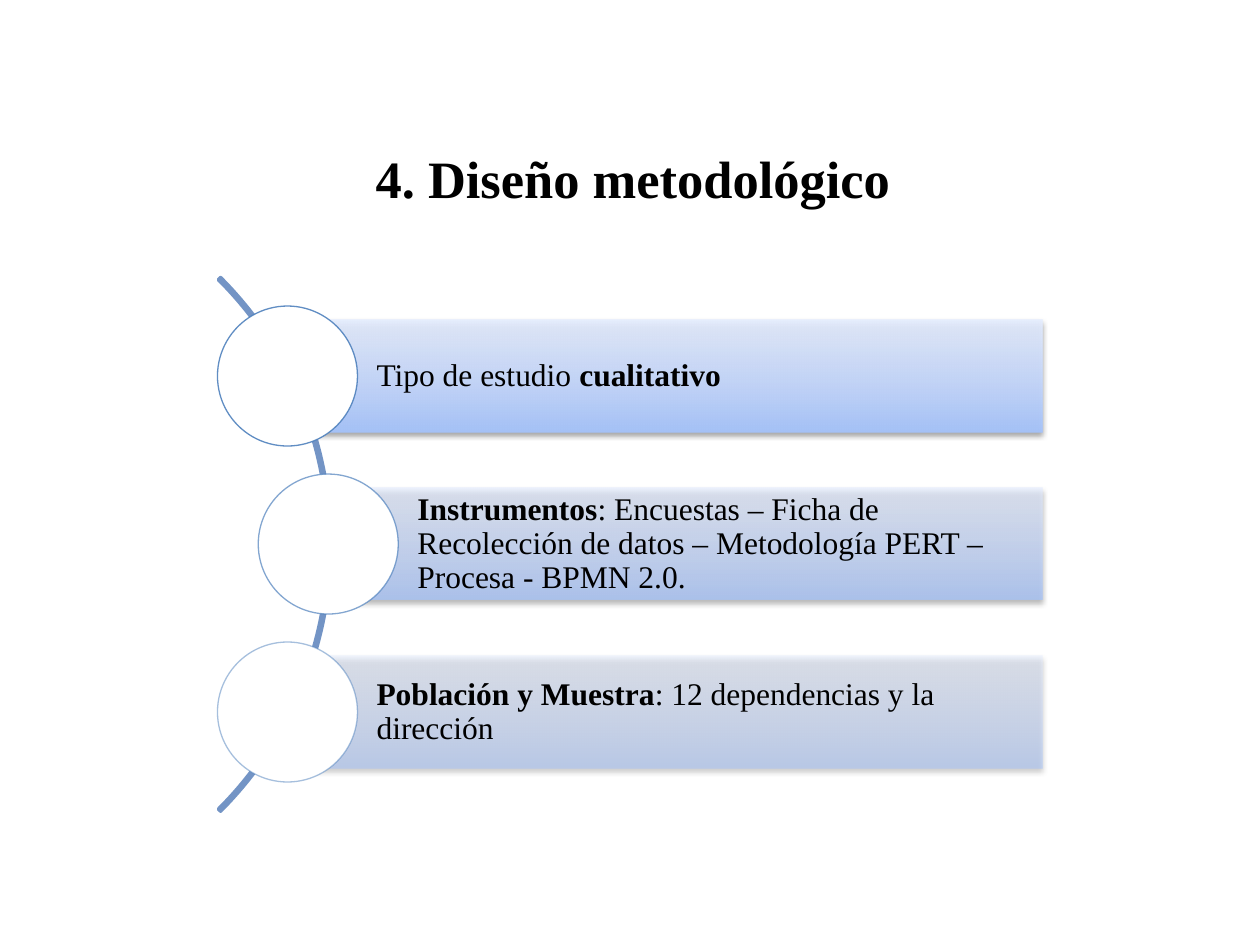
from dataclasses import dataclass

from lxml import etree
from pptx import Presentation
from pptx.dml.color import RGBColor
from pptx.enum.shapes import MSO_SHAPE
from pptx.enum.text import MSO_ANCHOR, PP_ALIGN
from pptx.oxml import parse_xml
from pptx.oxml.ns import nsdecls, qn
from pptx.util import Pt

ARC, BAR, CIRCLE = MSO_SHAPE.BLOCK_ARC, MSO_SHAPE.RECTANGLE, MSO_SHAPE.OVAL
MIDDLE = MSO_ANCHOR.MIDDLE
LEFT, CENTER = PP_ALIGN.LEFT, PP_ALIGN.CENTER


@dataclass(frozen=True)
class Theme:
    font: str = "Times New Roman"
    title_size: float = 30
    body_size: float = 18
    text: str = "000000"
    arc: str = "7394C5"
    outline: str = "4F81BD"
    circle: str = "FFFFFF"
    gradient: tuple = ((0, "A4C4FF"), (35, "BFD4FF"), (100, "E6EEFF"))


def write_text(shape, runs, *, theme, size, align=LEFT, line_spacing=1.0, left_inset=7.2):
    """Fill a shape with one paragraph made of (text, bold) runs."""
    frame = shape.text_frame
    frame.word_wrap = True
    frame.vertical_anchor = MIDDLE
    frame.margin_left = Pt(left_inset)
    frame.margin_right = frame.margin_top = frame.margin_bottom = Pt(3.6)
    paragraph = frame.paragraphs[0]
    paragraph.alignment = align
    paragraph.line_spacing = line_spacing
    for text, bold in runs:
        run = paragraph.add_run()
        run.text = text
        run.font.name = theme.font
        run.font.size = Pt(size)
        run.font.bold = bold
        run.font.color.rgb = RGBColor.from_string(theme.text)


class SlideBuilder:
    def __init__(self, slide, theme):
        self.slide = slide
        self.theme = theme
        self.diagram = None

    def start_diagram(self):
        self.diagram = self.slide.shapes.add_group_shape()

    def shape(self, kind, left, top, width, height):
        shape = self.diagram.shapes.add_shape(kind, Pt(left), Pt(top), Pt(width), Pt(height))
        shape.shadow.inherit = False
        return shape

    def outline(self, shape, color, width):
        shape.line.color.rgb = RGBColor.from_string(color)
        shape.line.width = Pt(width)

    def title(self, text, left, top, width, height):
        box = self.slide.shapes.add_textbox(Pt(left), Pt(top), Pt(width), Pt(height))
        write_text(box, [(text, True)], theme=self.theme,
                   size=self.theme.title_size, align=CENTER)

    def arc(self, left, top, size):
        arc = self.shape(ARC, left, top, size, size)
        for index, value in enumerate((189, 27, 0.004)):
            arc.adjustments[index] = value
        arc.fill.background()
        self.outline(arc, self.theme.arc, 2)

    def bar(self, left, top, width, height, opacity):
        bar = self.shape(BAR, left, top, width, height)
        bar.line.fill.background()
        stops = "".join(
            f'<a:gs pos="{position * 1000}"><a:srgbClr val="{color}">'
            f'<a:alpha val="{opacity * 1000}"/></a:srgbClr></a:gs>'
            for position, color in self.theme.gradient)
        gradient = parse_xml(
            f'<a:gradFill {nsdecls("a")} rotWithShape="1"><a:gsLst>{stops}</a:gsLst>'
            '<a:lin ang="16200000" scaled="0"/></a:gradFill>')
        properties = bar._element.spPr
        properties.find(qn("a:prstGeom")).addnext(gradient)
        # Soft shadow straight below the bar
        effects = properties.find(qn("a:effectLst"))
        shadow = etree.SubElement(
            effects, qn("a:outerShdw"), blurRad=str(Pt(3.1)), dist=str(Pt(1.6)),
            dir="5400000", rotWithShape="0")
        color = etree.SubElement(shadow, qn("a:srgbClr"), val="000000")
        etree.SubElement(color, qn("a:alpha"), val="38000")

    def label(self, runs, left, top, width, height):
        box = self.diagram.shapes.add_textbox(Pt(left), Pt(top), Pt(width), Pt(height))
        write_text(box, runs, theme=self.theme, size=self.theme.body_size,
                   line_spacing=0.9, left_inset=50.9)

    def circle(self, center_x, center_y, size, opacity):
        circle = self.shape(CIRCLE, center_x - size / 2, center_y - size / 2, size, size)
        circle.fill.solid()
        circle.fill.fore_color.rgb = RGBColor.from_string(self.theme.circle)
        self.outline(circle, self.theme.outline, 0.75)
        color = circle.line._ln.find(".//" + qn("a:srgbClr"))
        etree.SubElement(color, qn("a:alpha"), val=str(opacity * 1000))


def main():
    presentation = Presentation()
    presentation.slide_width, presentation.slide_height = Pt(720), Pt(540)
    slide = presentation.slides.add_slide(presentation.slide_layouts[6])
    builder = SlideBuilder(slide, Theme())

    # Title
    builder.title("4. Diseño metodológico", 54, 69.1, 612, 64.8)

    # Curve behind the rows
    builder.start_diagram()
    builder.arc(-242, 95.5, 431.2)

    # Rows: each bar starts at the centre of its circle
    first_center, pitch = 214.9, 96
    bar_right, bar_height, circle_size = 595.8, 64, 80
    rows = [
        (164.3, 90, [("Tipo de estudio ", False), ("cualitativo", True)]),
        (187.6, 70, [("Instrumentos", True),
                     (": Encuestas – Ficha de Recolección de datos – "
                      "Metodología PERT – Procesa - BPMN 2.0.", False)]),
        (164.3, 50, [("Población y Muestra", True),
                     (": 12 dependencias y la dirección", False)]),
    ]
    for index, (center_x, opacity, runs) in enumerate(rows):
        center_y = first_center + index * pitch
        area = (center_x, center_y - bar_height / 2, bar_right - center_x, bar_height)
        builder.bar(*area, opacity)
        builder.label(runs, *area)
        builder.circle(center_x, center_y, circle_size, opacity)

    presentation.save("out.pptx")


if __name__ == "__main__":
    main()
